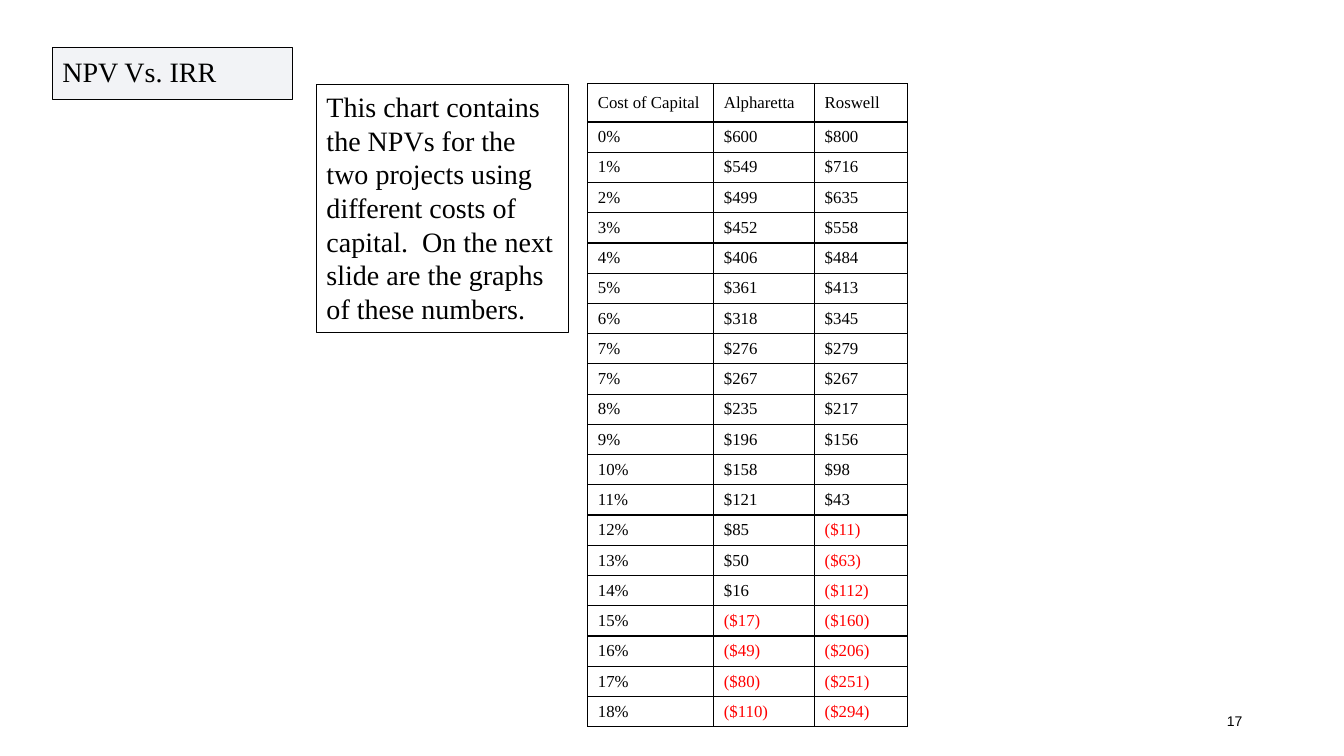
import dataclasses
import typing

import pptx
import pptx.dml.color
import pptx.enum.shapes
import pptx.enum.text
import pptx.oxml
import pptx.oxml.ns
import pptx.util

PX = 9144
COLORS = {"ink": "000000", "loss": "FF0000", "navy": "002060"}
SERIF = "Times New Roman"
ANCHOR = pptx.enum.text.MSO_ANCHOR
ALIGN = pptx.enum.text.PP_ALIGN


@dataclasses.dataclass
class TextBlock:
    text: str
    left: int
    top: int
    width: int
    height: int
    size: int = 20
    font: str = SERIF
    outlined: bool = True
    fill: typing.Optional[str] = None
    opacity: int = 100
    frame: dict = dataclasses.field(default_factory=dict)
    para: dict = dataclasses.field(default_factory=dict)


class NpvRow(typing.NamedTuple):
    cost: int
    alpharetta: int
    roswell: int


BLOCKS = [
    TextBlock(
        "This chart contains the NPVs for the two projects using different costs of capital.  "
        "On the next slide are the graphs of these numbers.",
        314, 84, 250, 246,
        frame={"vertical_anchor": ANCHOR.TOP, "auto_size": pptx.enum.text.MSO_AUTO_SIZE.SHAPE_TO_FIT_TEXT},
    ),
    TextBlock("17", 942, 695, 300, 40, size=10, font="Arial", outlined=False,
              para={"alignment": ALIGN.RIGHT}),
    TextBlock("NPV Vs. IRR", 52, 47, 238, 52, fill="navy", opacity=5,
              para={"line_spacing": 0.9}),
]

HEADERS = ("Cost of Capital", "Alpharetta", "Roswell")
COLUMN_WIDTHS = (125, 100, 92)
HEADER_HEIGHT, ROW_HEIGHT = 38, 30
NPV_ROWS = [
    NpvRow(0, 600, 800), NpvRow(1, 549, 716), NpvRow(2, 499, 635),
    NpvRow(3, 452, 558), NpvRow(4, 406, 484), NpvRow(5, 361, 413),
    NpvRow(6, 318, 345), NpvRow(7, 276, 279), NpvRow(7, 267, 267),
    NpvRow(8, 235, 217), NpvRow(9, 196, 156), NpvRow(10, 158, 98),
    NpvRow(11, 121, 43), NpvRow(12, 85, -11), NpvRow(13, 50, -63),
    NpvRow(14, 16, -112), NpvRow(15, -17, -160), NpvRow(16, -49, -206),
    NpvRow(17, -80, -251), NpvRow(18, -110, -294),
]


def px(length: int) -> int:
    return length * PX


def color(name: str) -> pptx.dml.color.RGBColor:
    return pptx.dml.color.RGBColor.from_string(COLORS[name])


def apply(target: typing.Any, values: dict) -> None:
    for name, value in values.items():
        setattr(target, name, value)


def write(para: typing.Any, text: str, size: int, font: str, ink: str = "ink") -> None:
    span = para.add_run()
    span.text = text
    apply(span.font, {"size": pptx.util.Pt(size), "name": font})
    span.font.color.rgb = color(ink)


def draw_block(page: typing.Any, block: TextBlock) -> None:
    bounds = [px(n) for n in (block.left, block.top, block.width, block.height)]
    if block.outlined:
        box = page.shapes.add_shape(pptx.enum.shapes.MSO_SHAPE.RECTANGLE, *bounds)
        box.shadow.inherit = False
        box.line.color.rgb = color("ink")
        box.line.width = pptx.util.Pt(0.75)
    else:
        box = page.shapes.add_textbox(*bounds)
    if block.fill:
        box.fill.solid()
        box.fill.fore_color.rgb = color(block.fill)
        tint = box.fill._xPr.find(".//" + pptx.oxml.ns.qn("a:srgbClr"))
        alpha = pptx.oxml.parse_xml(
            f'<a:alpha {pptx.oxml.ns.nsdecls("a")} val="{block.opacity * 1000}"/>')
        tint.append(alpha)
    else:
        box.fill.background()
    apply(box.text_frame, {"word_wrap": True, "vertical_anchor": ANCHOR.MIDDLE, **block.frame})
    para = box.text_frame.paragraphs[0]
    apply(para, {"alignment": ALIGN.LEFT, **block.para})
    write(para, block.text, block.size, block.font)


def border_cell(cell: typing.Any) -> None:
    properties = cell._tc.get_or_add_tcPr()
    for position, side in enumerate(("lnL", "lnR", "lnT", "lnB")):
        properties.insert(position, pptx.oxml.parse_xml(
            f'<a:{side} {pptx.oxml.ns.nsdecls("a")} w="12700"><a:solidFill>'
            f'<a:srgbClr val="{COLORS["ink"]}"/></a:solidFill></a:{side}>'))


def dollars(value: int) -> str:
    return f"(${-value})" if value < 0 else f"${value}"


def draw_npv_table(page: typing.Any) -> None:
    lines = [HEADERS] + [
        (f"{row.cost}%", dollars(row.alpharetta), dollars(row.roswell)) for row in NPV_ROWS
    ]
    height = HEADER_HEIGHT + ROW_HEIGHT * len(NPV_ROWS)
    table = page.shapes.add_table(
        len(lines), len(HEADERS), px(583), px(83), px(sum(COLUMN_WIDTHS)), px(height)).table
    apply(table, {"first_row": False, "horz_banding": False})
    for column, width in zip(table.columns, COLUMN_WIDTHS):
        column.width = px(width)
    for index, (row, texts) in enumerate(zip(table.rows, lines)):
        row.height = px(ROW_HEIGHT if index else HEADER_HEIGHT)
        for cell, text in zip(row.cells, texts):
            cell.vertical_anchor = ANCHOR.MIDDLE
            cell.fill.background()
            border_cell(cell)
            ink = "loss" if text.startswith("(") else "ink"
            write(cell.text_frame.paragraphs[0], text, 12, SERIF, ink)


def main() -> None:
    deck = pptx.Presentation()
    apply(deck, {"slide_width": px(1333), "slide_height": px(750)})
    page = deck.slides.add_slide(deck.slide_layouts[6])
    draw_npv_table(page)
    for block in BLOCKS:
        draw_block(page, block)
    deck.save("out.pptx")


if __name__ == "__main__":
    main()
